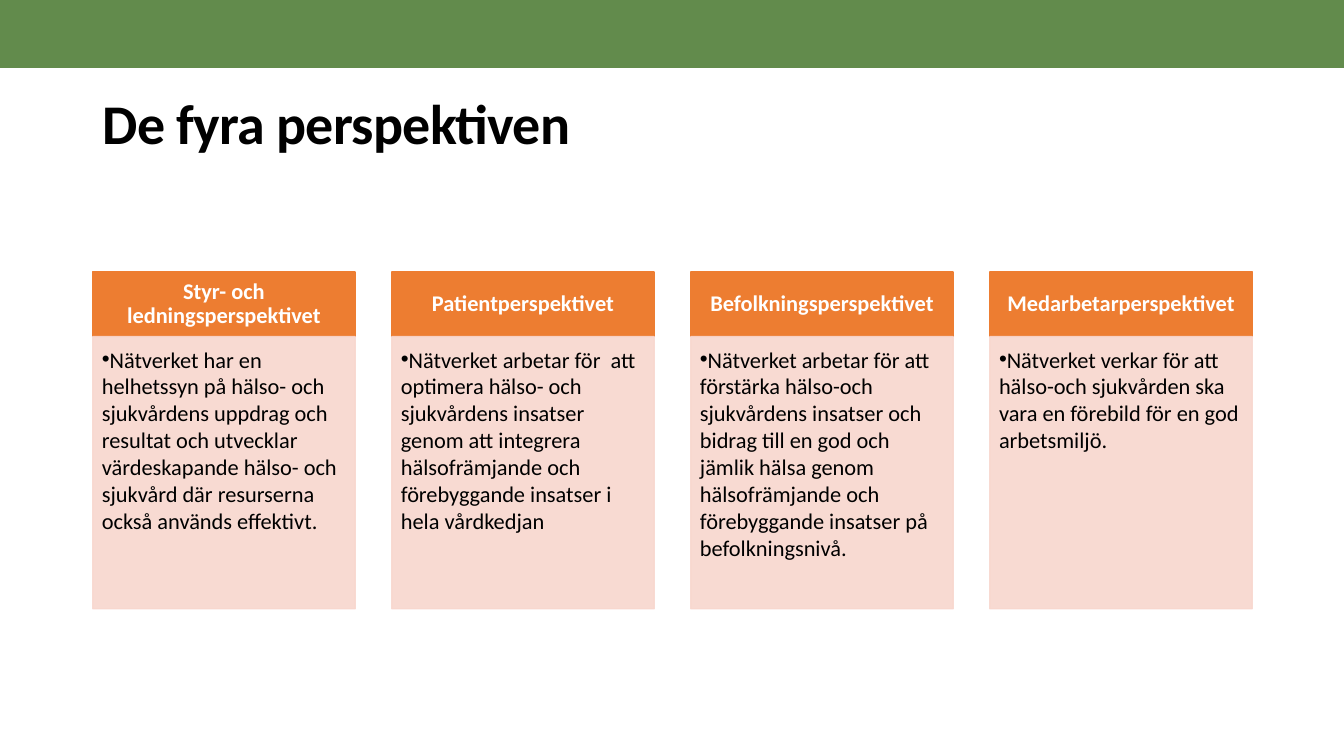
"""Builds the slide with the four perspectives as headed columns."""
from typing import NamedTuple

from pptx import Presentation
from pptx.dml.color import RGBColor
from pptx.enum.shapes import MSO_SHAPE as Shape
from pptx.enum.text import MSO_ANCHOR as Anchor, PP_ALIGN as Align
from pptx.oxml.ns import qn
from pptx.util import Inches, Pt
from lxml.etree import SubElement

GREEN = RGBColor(0x44, 0x75, 0x2A)
ORANGE = RGBColor(0xED, 0x7D, 0x31)
PINK = RGBColor(0xF8, 0xD7, 0xCE)
BLACK = RGBColor(0, 0, 0)
WHITE = RGBColor(0xFF, 0xFF, 0xFF)

SLIDE_W, SLIDE_H = 13.33, 7.5
LEFT, GRID_W = 0.92, 11.5
GAP_SHARE = 0.14
HEAD_TOP, HEAD_H, BODY_H = 2.7, 0.64, 2.7


class Box(NamedTuple):
    left: float
    top: float
    width: float
    height: float


class Perspective(NamedTuple):
    heading: str
    body: str


PERSPECTIVES = [
    Perspective("Styr- och ledningsperspektivet",
                "Nätverket har en helhetssyn på hälso- och sjukvårdens uppdrag och resultat och "
                "utvecklar värdeskapande hälso- och sjukvård där resurserna också används effektivt."),
    Perspective("Patientperspektivet",
                "Nätverket arbetar för  att optimera hälso- och sjukvårdens insatser genom att "
                "integrera hälsofrämjande och förebyggande insatser i hela vårdkedjan"),
    Perspective("Befolkningsperspektivet",
                "Nätverket arbetar för att förstärka hälso-och sjukvårdens insatser och bidrag till "
                "en god och jämlik hälsa genom hälsofrämjande och förebyggande insatser på "
                "befolkningsnivå."),
    Perspective("Medarbetarperspektivet",
                "Nätverket verkar för att hälso-och sjukvården ska vara en förebild för en god "
                "arbetsmiljö."),
]


def set_alpha(sp, percent: int) -> None:
    for color in sp._element.spPr.iter(qn("a:srgbClr")):
        SubElement(color, qn("a:alpha"), val=str(percent * 1000))


def add_rect(slide, box: Box, color: RGBColor, alpha: int = 100, outline: bool = True):
    sp = slide.shapes.add_shape(Shape.RECTANGLE, *map(Inches, box))
    sp.shadow.inherit = False
    sp.fill.solid()
    sp.fill.fore_color.rgb = color
    if outline:
        sp.line.color.rgb = color
        sp.line.width = Pt(1)
    else:
        sp.line.fill.background()
    if alpha < 100:
        set_alpha(sp, alpha)
    return sp


def write(sp, text: str, *, size: int = 16, color: RGBColor = BLACK, bold: bool = False,
          align: Align = Align.LEFT, anchor: Anchor = Anchor.MIDDLE, spacing: float = 1.0,
          insets: tuple = (0.1, 0.05, 0.1, 0.05), bullet: bool = False, kerning: int = 0) -> None:
    tf = sp.text_frame
    tf.word_wrap = True
    tf.vertical_anchor = anchor
    tf.margin_left, tf.margin_top, tf.margin_right, tf.margin_bottom = map(Inches, insets)
    p = tf.paragraphs[0]
    p.alignment, p.line_spacing = align, spacing
    if bullet:
        pPr = p._p.get_or_add_pPr()
        pPr.set("marL", "0")
        pPr.set("indent", str(Inches(-0.19)))
        SubElement(pPr, qn("a:buFont"), typeface="Arial")
        SubElement(pPr, qn("a:buChar"), char="•")
    r = p.add_run()
    r.text = text
    r.font.name, r.font.size, r.font.bold = "Calibri", Pt(size), bold
    r.font.color.rgb = color
    if kerning:
        r._r.get_or_add_rPr().set("spc", str(kerning))


def add_perspective(slide, item: Perspective, left: float, width: float) -> None:
    head = add_rect(slide, Box(left, HEAD_TOP, width, HEAD_H), ORANGE)
    write(head, item.heading, color=WHITE, bold=True, align=Align.CENTER, spacing=0.9,
          insets=(0.12, 0.07, 0.12, 0.07))
    body = add_rect(slide, Box(left, HEAD_TOP + HEAD_H, width, BODY_H), PINK, alpha=90)
    write(body, item.body, anchor=Anchor.TOP, insets=(0.09, 0.09, 0.12, 0.14), bullet=True)


def main() -> None:
    prs = Presentation()
    prs.slide_width, prs.slide_height = Inches(SLIDE_W), Inches(SLIDE_H)
    slide = prs.slides.add_slide(prs.slide_layouts[6])
    add_rect(slide, Box(0, 0, SLIDE_W, SLIDE_H * 0.09), GREEN, alpha=84, outline=False)
    title = slide.shapes.add_textbox(*map(Inches, Box(LEFT, 0.74, GRID_W, 1.02)))
    write(title, "De fyra perspektiven", size=40, bold=True, spacing=0.9, kerning=-50)
    count = len(PERSPECTIVES)
    width = GRID_W / (count + (count - 1) * GAP_SHARE)
    for i, item in enumerate(PERSPECTIVES):
        add_perspective(slide, item, LEFT + i * width * (1 + GAP_SHARE), width)
    prs.save("out.pptx")


if __name__ == "__main__":
    main()
